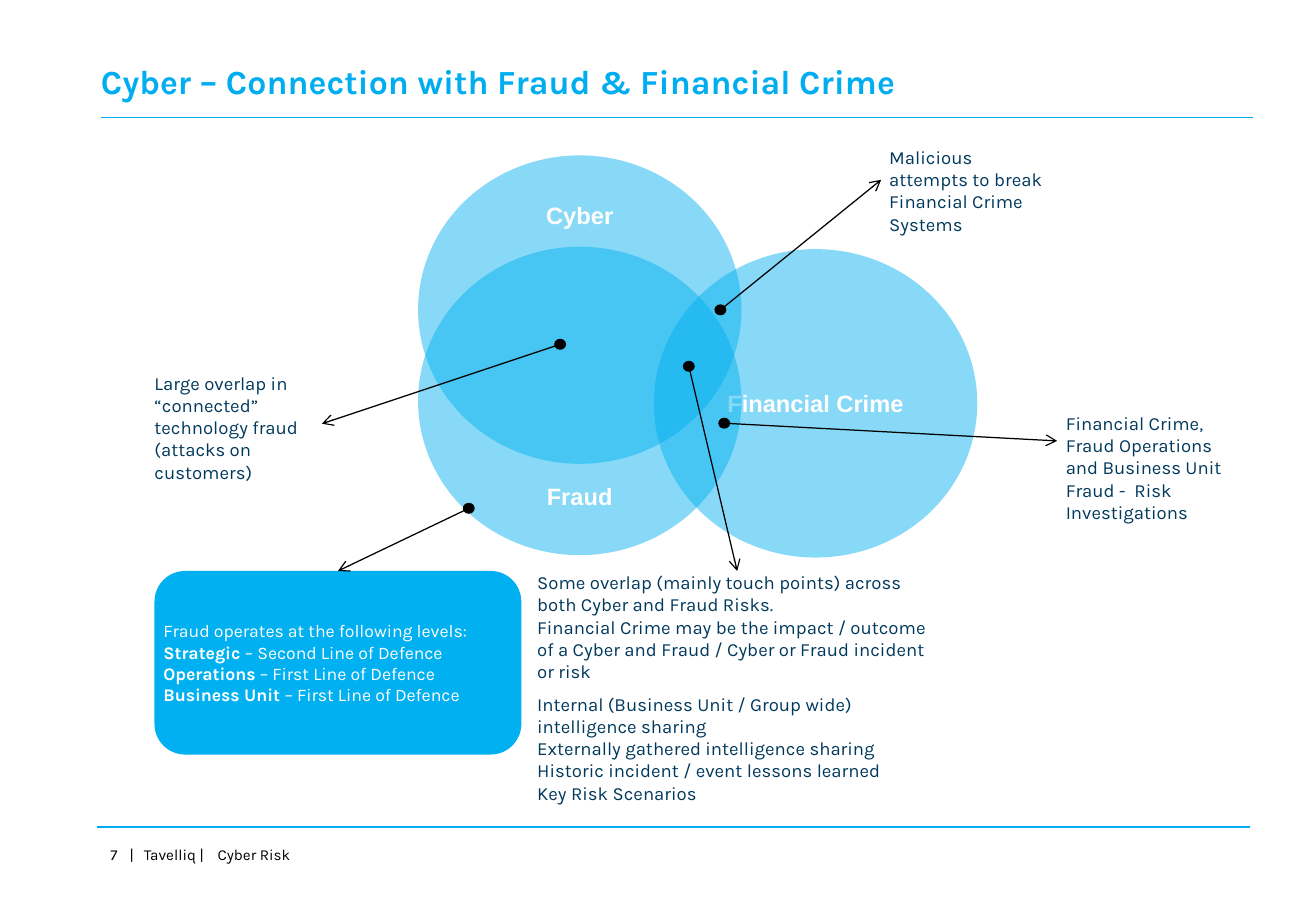
import pptx
import pptx.util
import pptx.dml.color
import pptx.enum.shapes
import pptx.enum.text
import pptx.oxml
import pptx.oxml.ns
from lxml import etree

Cm, Pt = pptx.util.Cm, pptx.util.Pt
SHAPE = pptx.enum.shapes.MSO_SHAPE
ANCHOR = pptx.enum.text.MSO_ANCHOR
CENTER = pptx.enum.text.PP_ALIGN.CENTER
qn = pptx.oxml.ns.qn

# Content; lengths in cm
TITLE = "Cyber – Connection with Fraud & Financial Crime"
FOOTER = "7\t|\tTavelliq |\tCyber Risk"
FOOTER_TABS = (0.4, 0.7, 2.24)

CIRCLE_SIZE = (6.76, 6.45)
CIRCLES = [  # label, left, top, anchor
    ("Cyber", 8.74, 3.25, ANCHOR.TOP),
    ("Financial Crime", 13.67, 5.21, ANCHOR.MIDDLE),
    ("Fraud", 8.74, 5.16, ANCHOR.BOTTOM),
]
NOTES = {  # name: (position, paragraphs)
    "technology": ((3.23, 7.77, 3.51, 2.36), [
        "Large overlap in “connected” technology fraud (attacks on customers)"]),
    "operations": ((22.28, 8.61, 3.51, 2.36), [
        "Financial Crime, Fraud Operations and Business Unit Fraud -  Risk Investigations"]),
    "attempts": ((18.59, 3.05, 3.35, 1.42), [
        "Malicious attempts to break Financial Crime Systems"]),
    "overlap": ((11.23, 11.94, 8.36, 5.38), [
        "Some overlap (mainly touch points) across both Cyber and Fraud Risks.",
        "Financial Crime may be the impact / outcome of a Cyber and Fraud / "
        "Cyber or Fraud incident or risk",
        "Internal (Business Unit / Group wide) intelligence sharing",
        "Externally gathered intelligence sharing",
        "Historic incident / event lessons learned",
        "Key Risk Scenarios"]),
}
SHARING = 2  # paragraph that opens the second group of the overlap note
LEVELS_AT = (3.23, 11.94, 7.67, 3.84)
LEVELS = [  # bold part, plain part
    ("", "Fraud operates at the following levels:"),
    ("Strategic ", "– Second Line of Defence"),
    ("Operations", " – First Line of Defence"),
    ("Business Unit ", "– First Line of Defence"),
]
DOT_SIZE = (0.25, 0.23)
ARROWS = [  # dot centre, end point or name of the box it joins at the top
    ((11.71, 7.2), (6.73, 8.86)),
    ((14.4, 7.66), "overlap"),
    ((15.14, 8.85), (22.1, 9.22)),
    ((9.8, 10.63), "levels"),
    ((15.06, 6.48), (18.42, 3.76)),
]
RULES = [(2.11, 2.46, 26.19), (2.03, 17.3, 26.14)]  # left, y, right

# Formats
BLUE, RULE_BLUE, NAVY, WHITE, BLACK = "00B0F0", "00AEEF", "00395C", "FFFFFF", "000000"
TITLE_FONT = dict(name="Karla", size=Pt(20), bold=True, color=RULE_BLUE)
CIRCLE_FONT = dict(name="Arial", size=Pt(14), bold=True, color=WHITE)
NOTE_FONT = dict(name="Karla", size=Pt(11), color=NAVY)
LEVEL_FONT = dict(name="Karla", size=Pt(10.5), color=WHITE)
FOOTER_FONT = dict(name="Karla", size=Pt(9), color=BLACK)


def paint(target, color):
    if hasattr(target, "solid"):
        target.solid()
        target = target.fore_color
    target.rgb = pptx.dml.color.RGBColor.from_string(color)


def write(sp, paragraphs, font, anchor=ANCHOR.TOP, align=None, inset=0):
    """Each paragraph is a list of (text, bold or None)."""
    tf = sp.text_frame
    tf.word_wrap = True
    tf.vertical_anchor = anchor
    for side in ("left", "top", "right", "bottom"):
        setattr(tf, "margin_" + side, Cm(inset / 2 if side in ("top", "bottom") else inset))
    for i, runs in enumerate(paragraphs):
        p = tf.paragraphs[0] if i == 0 else tf.add_paragraph()
        p.alignment = align
        for text, bold in runs:
            r = p.add_run()
            r.text = text
            for key, value in {"bold": bold, **font}.items():
                if key == "color":
                    paint(r.font.color, value)
                else:
                    setattr(r.font, key, value)
    return tf


def add_text(at, paragraphs, font, **layout):
    sp = s.shapes.add_textbox(*map(Cm, at))
    write(sp, [[(text, None)] for text in paragraphs], font, **layout)
    return sp


def add_shape(kind, at, color, alpha=None):
    sp = s.shapes.add_shape(kind, *map(Cm, at))
    sp.shadow.inherit = False
    sp.line.fill.background()
    paint(sp.fill, color)
    if alpha:
        clr = sp._element.spPr.find(qn("a:solidFill"))[0]
        etree.SubElement(clr, qn("a:alpha")).set("val", str(alpha * 1000))
    return sp


def add_line(start, end, color, width, arrow=False):
    ln = s.shapes.add_connector(
        pptx.enum.shapes.MSO_CONNECTOR.STRAIGHT, *map(Cm, start + end))
    paint(ln.line.fill, color)
    ln.line.width = Pt(width)
    if arrow:
        etree.SubElement(ln.line._get_or_add_ln(), qn("a:tailEnd")).set("type", "arrow")
    etree.SubElement(ln._element.spPr, qn("a:effectLst"))
    return ln


prs = pptx.Presentation()
prs.slide_width, prs.slide_height = Cm(27.51), Cm(19.05)
s = prs.slides.add_slide(prs.slide_layouts[6])

# Title and rules
add_text((2.11, 1.27, 24.26, 0.86), [TITLE], TITLE_FONT, anchor=ANCHOR.MIDDLE)
for left, y, right in RULES:
    add_line((left, y), (right, y), RULE_BLUE, 1)

# Overlapping circles
for label, left, top, anchor in CIRCLES:
    sp = add_shape(SHAPE.OVAL, (left, top, *CIRCLE_SIZE), BLUE, alpha=47)
    write(sp, [[(label, None)]], CIRCLE_FONT, anchor=anchor, align=CENTER)

# Notes and the box of fraud levels
boxes = {name: add_text(at, texts, NOTE_FONT) for name, (at, texts) in NOTES.items()}
boxes["overlap"].text_frame.paragraphs[SHARING].space_before = Pt(6)
boxes["levels"] = add_shape(SHAPE.ROUNDED_RECTANGLE, LEVELS_AT, BLUE)
write(boxes["levels"],
      [[(text, bold) for text, bold in ((head, True), (rest, False)) if text]
       for head, rest in LEVELS],
      LEVEL_FONT, anchor=ANCHOR.MIDDLE, align=pptx.enum.text.PP_ALIGN.LEFT)

# Arrows from dots to notes
for start, end in ARROWS:
    joined = isinstance(end, str)
    ln = add_line(start, start if joined else end, BLACK, 0.75, arrow=True)
    if joined:
        ln.end_connect(boxes[end], 0)
    corner = [c - size / 2 for c, size in zip(start, DOT_SIZE)]
    add_shape(SHAPE.OVAL, (*corner, *DOT_SIZE), BLACK)

# Footer
sp = s.shapes.add_textbox(*map(Cm, (2.06, 17.55, 17.32, 0.6)))
tf = write(sp, [[(FOOTER, None)]], FOOTER_FONT, inset=0.25)
tabs = etree.SubElement(tf.paragraphs[0]._p.get_or_add_pPr(), qn("a:tabLst"))
for pos in FOOTER_TABS:
    tab = etree.SubElement(tabs, qn("a:tab"))
    tab.set("pos", str(Cm(pos)))
    tab.set("algn", "l")

prs.save("out.pptx")
